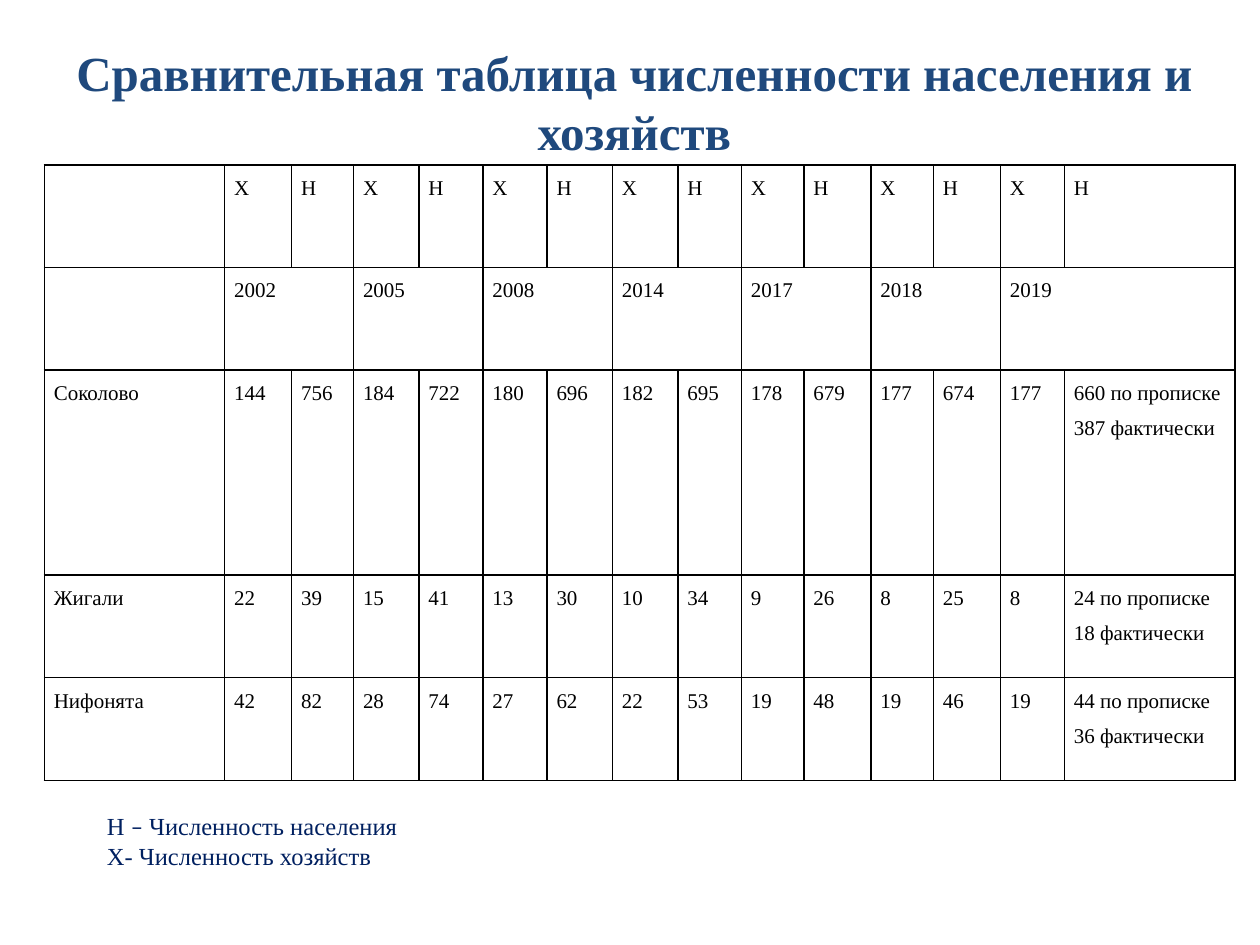
import dataclasses
import typing

import lxml.etree
import pptx
import pptx.dml.color
import pptx.enum.text
import pptx.oxml.ns
import pptx.util

Pt = pptx.util.Pt
RGB = pptx.dml.color.RGBColor
ALIGN = pptx.enum.text.PP_ALIGN
qn = pptx.oxml.ns.qn

BLACK = RGB(0x00, 0x00, 0x00)
NAVY = RGB(0x00, 0x20, 0x60)
BLUE = RGB(0x1F, 0x49, 0x7D)
SERIF = "Times New Roman"
PLAIN = "{2D5ABB26-0587-4C30-8999-92F81FD0307C}"  # no style, no grid

# Formats
TITLE = {"size": Pt(28), "name": SERIF, "bold": True}
NOTE = {"size": Pt(14), "name": SERIF}
BODY = {"size": Pt(12), "name": SERIF}
PAD = {"margin_left": Pt(5.4), "margin_right": Pt(5.4),
       "margin_top": 0, "margin_bottom": 0}
FLAGS = {"first_row": False, "horz_banding": False}

# Table data: one household and one people column per year
COLS = [103, 38.3, 35.4, 37.4, 36.6, 36.6, 37.4, 37.4,
        36.3, 35.7, 38.3, 35.7, 38.3, 36.6, 97.4, 14.4]
ROWS = [58.6, 58.6, 117.2, 58.6, 58.6]
YEARS = ["2002", "2005", "2008", "2014", "2017", "2018", "2019"]
LAST = len(COLS) - 1


@dataclasses.dataclass
class Place:
    name: str
    counts: str
    listed: int
    actual: int

    def cells(self) -> list[str]:
        final = f"{self.listed} по прописке\n{self.actual} фактически"
        return [self.name, *self.counts.split(), final]


@dataclasses.dataclass
class Label:
    left: float
    top: float
    width: float
    height: float
    lines: list[list[tuple[str, str]]]  # runs of text and font
    style: dict[str, typing.Any]
    color: RGB
    align: ALIGN


PLACES = [
    Place("Соколово", "144 756 184 722 180 696 182 695 178 679 177 674 177", 660, 387),
    Place("Жигали", "22 39 15 41 13 30 10 34 9 26 8 25 8", 24, 18),
    Place("Нифонята", "42 82 28 74 27 62 22 53 19 48 19 46 19", 44, 36),
]

LABELS = [
    Label(54, 460, 351.5, 80, [
        [("Н ", SERIF), ("–", "Calibri"), (" Численность населения", SERIF)],
        [("Х- Численность хозяйств", SERIF)],
    ], NOTE, NAVY, ALIGN.LEFT),
    Label(25.2, 20.9, 674.6, 75, [
        [("Сравнительная таблица численности населения и хозяйств", SERIF)],
    ], TITLE, BLUE, ALIGN.CENTER),
]


def apply(item: typing.Any, style: dict[str, typing.Any]) -> None:
    for key, val in style.items():
        setattr(item, key, val)


def set_font(font: typing.Any, style: dict[str, typing.Any], color: RGB) -> None:
    apply(font, style)
    font.color.rgb = color


def add_label(slide: typing.Any, label: Label) -> None:
    box = slide.shapes.add_textbox(
        Pt(label.left), Pt(label.top), Pt(label.width), Pt(label.height))
    frame = box.text_frame
    frame.word_wrap = True
    for num, line in enumerate(label.lines):
        para = frame.add_paragraph() if num else frame.paragraphs[0]
        para.alignment = label.align
        for text, face in line:
            run = para.add_run()
            run.text = text
            set_font(run.font, label.style | {"name": face}, label.color)


def add_edges(cell: typing.Any, sides: str) -> None:
    props = cell._tc.get_or_add_tcPr()
    for side in sides:
        line = lxml.etree.SubElement(props, qn(f"a:ln{side}"), w=str(Pt(1)))
        fill = lxml.etree.SubElement(line, qn("a:solidFill"))
        lxml.etree.SubElement(fill, qn("a:srgbClr"), val=str(BLACK))


def fill_cell(cell: typing.Any, text: str, sides: str) -> None:
    add_edges(cell, sides)
    cell.fill.background()
    apply(cell, PAD)
    if not text:
        return
    cell.text_frame.text = text
    for para in cell.text_frame.paragraphs:
        apply(para, {"alignment": ALIGN.JUSTIFY, "line_spacing": 1.5})
        set_font(para.runs[0].font, BODY, BLACK)


def add_grid(slide: typing.Any) -> None:
    frame = slide.shapes.add_table(
        len(ROWS), len(COLS), Pt(25.4), Pt(94.3), Pt(sum(COLS)), Pt(sum(ROWS)))
    table = frame.table
    apply(table, FLAGS)
    table._tbl.tblPr.find(qn("a:tableStyleId")).text = PLAIN
    for col, width in zip(table.columns, COLS):
        col.width = Pt(width)
    for row, height in zip(table.rows, ROWS):
        row.height = Pt(height)

    # Each year covers a pair of columns; the last column stays empty
    years = [""] + [text for year in YEARS for text in (year, "")]
    grid = [["", *["Х", "Н"] * len(YEARS)], years]
    grid += [place.cells() for place in PLACES]
    for r, texts in enumerate(grid):
        for c, text in enumerate(texts):
            fill_cell(table.cell(r, c), text, "LRTB")
        fill_cell(table.cell(r, LAST), "", "L")
    for c in range(1, LAST, 2):
        table.cell(1, c).merge(table.cell(1, c + 1))
    table.cell(0, LAST).merge(table.cell(len(ROWS) - 1, LAST))


def main() -> None:
    deck = pptx.Presentation()
    apply(deck, {"slide_width": Pt(720), "slide_height": Pt(540)})
    slide = deck.slides.add_slide(deck.slide_layouts[6])
    add_grid(slide)
    for label in LABELS:
        add_label(slide, label)
    deck.save("out.pptx")


if __name__ == "__main__":
    main()
